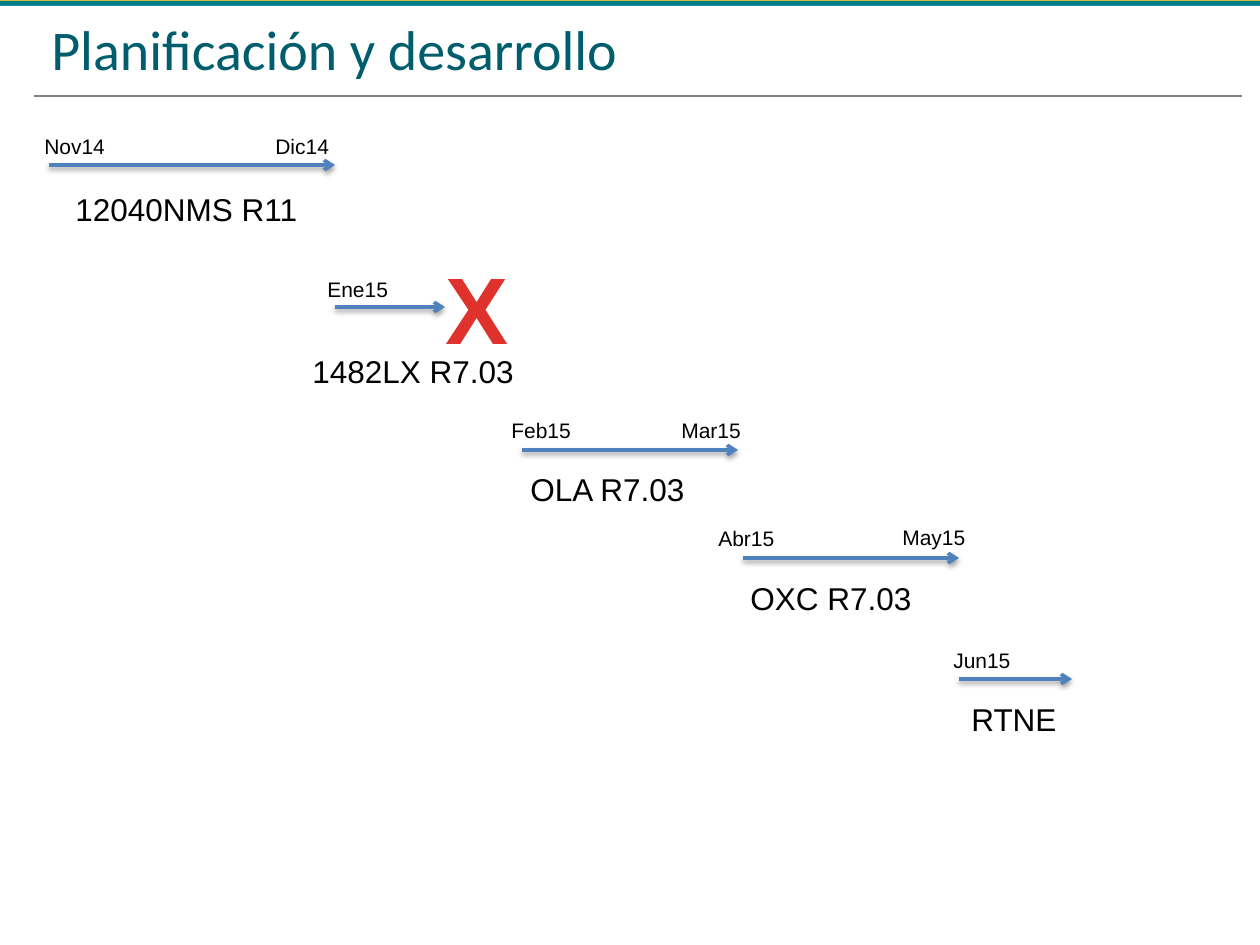
from lxml import etree
from pptx import Presentation
from pptx.dml.color import RGBColor as RGB
from pptx.enum.shapes import MSO_CONNECTOR as CONN, MSO_SHAPE as SHAPE
from pptx.enum.text import MSO_ANCHOR as ANCHOR, MSO_AUTO_SIZE as AUTO, PP_ALIGN as ALIGN
from pptx.oxml.ns import qn
from pptx.util import Emu, Pt

SCALE = 914400 / 126  # EMU per px

COLORS = {
    "gold": "F1C835", "teal": "007D86", "white": "FFFFFF", "grey": "808080",
    "title": "005D6D", "black": "000000", "blue": "4F81BD",
    "red": "E0322D", "dark_red": "A2201C",
}
TITLE = {"name": "Calibri", "size": Pt(32)}
NAME = {"name": "Arial", "size": Pt(18)}
DATE = {"name": "Arial", "size": Pt(12)}
CROSS = {"name": "Arial", "size": Pt(54), "bold": True}

# Arrow as (x1, x2, y), dates and name as (text, x, y, width)
PHASES = [
    ((49, 335, 165), [("Nov14", 32, 127), ("Dic14", 263, 127)], ("12040NMS R11", 63, 184, 304)),
    ((335, 445, 307), [("Ene15", 315, 270)], ("1482LX R7.03", 300, 346, 304)),
    ((522, 738, 450), [("Feb15", 499, 411), ("Mar15", 669, 411)], ("OLA R7.03", 518, 464, 220)),
    ((743, 959, 558), [("Abr15", 706, 519), ("May15", 890, 518)], ("OXC R7.03", 738, 573, 220)),
    ((959, 1072, 679), [("Jun15", 941, 641)], ("RTNE", 959, 694, 220)),
]


def px(n):
    return Emu(round(n * SCALE))


def rgb(key):
    return RGB.from_string(COLORS[key])


class Builder:
    def __init__(self, prs):
        self.s = prs.slides.add_slide(prs.slide_layouts[6])

    def band(self, x, y, w, h, color):
        sp = self.s.shapes.add_shape(SHAPE.RECTANGLE, px(x), px(y), px(w), px(h))
        sp.shadow.inherit = False
        sp.fill.solid()
        sp.fill.fore_color.rgb = rgb(color)
        sp.line.fill.background()

    def group(self):
        return self.s.shapes.add_group_shape().shapes

    def text(self, text, x, y, w, h, fmt, color="black", parent=None, **frame):
        shapes = self.s.shapes if parent is None else parent
        tf = shapes.add_textbox(px(x), px(y), px(w), px(h)).text_frame
        for key, value in {"word_wrap": True, **frame}.items():
            setattr(tf, key, value)
        p = tf.paragraphs[0]
        r = p.add_run()
        r.text = text
        for key, value in fmt.items():
            setattr(r.font, key, value)
        r.font.color.rgb = rgb(color)
        return p, r

    def line(self, x1, x2, y, color, width, parent=None):
        shapes = self.s.shapes if parent is None else parent
        cn = shapes.add_connector(CONN.STRAIGHT, px(x1), px(y), px(x2), px(y))
        cn.line.color.rgb = rgb(color)
        cn.line.width = Pt(width)
        effects = etree.SubElement(cn._element.spPr, qn("a:effectLst"))
        return cn, effects

    def arrow(self, x1, x2, y, parent):
        cn, effects = self.line(x1, x2, y, "blue", 2, parent)
        etree.SubElement(cn.line._get_or_add_ln(), qn("a:tailEnd"), type="arrow")
        shadow = etree.SubElement(effects, qn("a:outerShdw"), blurRad=str(Pt(3.1)),
                                  dist=str(Pt(1.6)), dir="5400000", rotWithShape="0")
        clr = etree.SubElement(shadow, qn("a:srgbClr"), val=COLORS["black"])
        etree.SubElement(clr, qn("a:alpha"), val="38000")

    def cross(self, x, y, w, h):
        p, r = self.text("X", x, y, w, h, CROSS, "red", word_wrap=False,
                         auto_size=AUTO.SHAPE_TO_FIT_TEXT)
        p.alignment = ALIGN.CENTER
        r._r.get_or_add_rPr().set("spc", "50")
        fill = r.font.fill
        fill.gradient()
        fill.gradient_angle = 270
        for stop, pos, color in zip(fill.gradient_stops, (0.25, 1), ("red", "dark_red")):
            stop.position = pos
            stop.color.rgb = rgb(color)

    def phase(self, arrow, dates, name):
        grp = self.group()
        grow = {"parent": grp, "auto_size": AUTO.SHAPE_TO_FIT_TEXT}
        self.arrow(*arrow, grp)
        for text, x, y in dates:
            self.text(text, x, y, 103, 38, DATE, **grow)
        self.text(*name, 50, NAME, **grow)


def main():
    prs = Presentation()
    prs.slide_width, prs.slide_height = px(1260), px(945)
    b = Builder(prs)

    # Header bands, rule and title
    b.band(0, -2, 1260, 13, "gold")
    b.band(-1, 1, 1261, 24, "teal")
    b.band(-1, 6, 1261, 24, "white")
    b.line(34, 1242, 96, "grey", 0.75)
    b.text("Planificación y desarrollo", 39, 0, 1208, 96, TITLE, "title",
           vertical_anchor=ANCHOR.MIDDLE)

    # Cancelled mark
    b.cross(433, 244, 89, 127)

    # Timeline phases
    for phase in PHASES:
        b.phase(*phase)

    prs.save("out.pptx")


if __name__ == "__main__":
    main()
